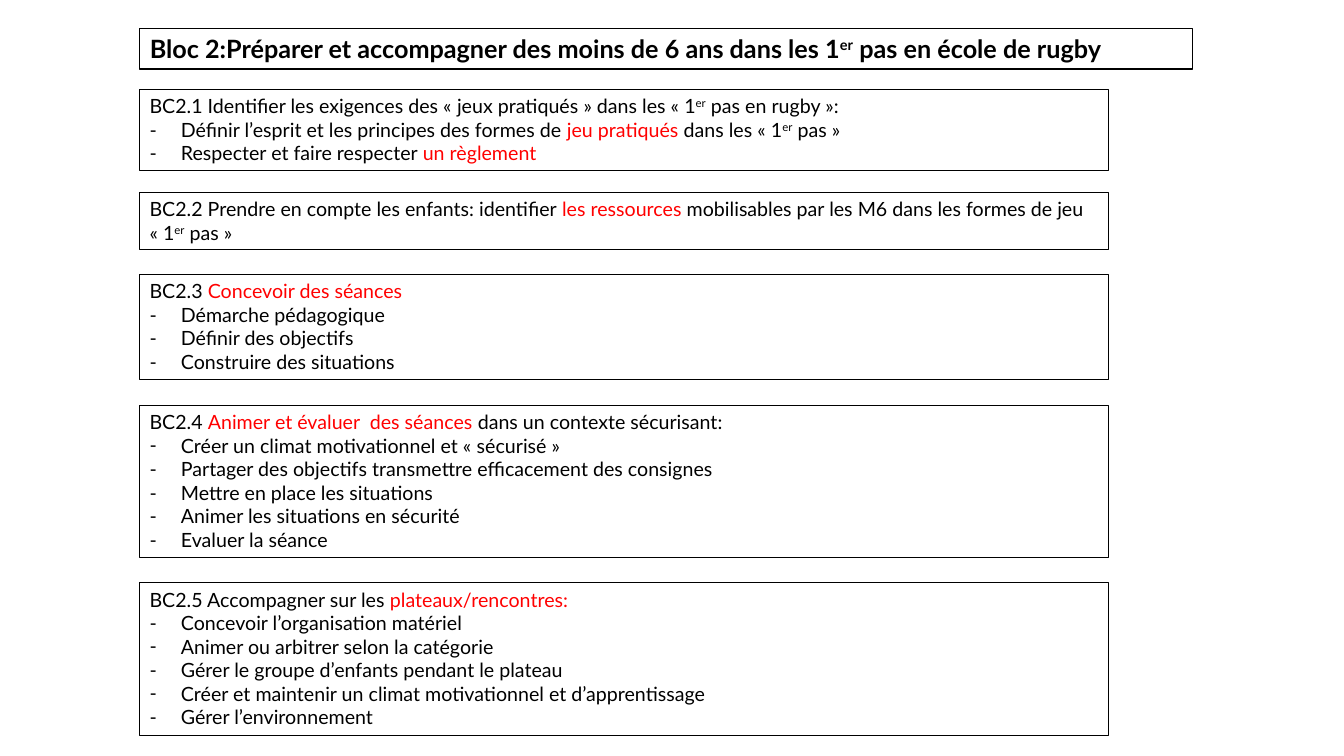
"""Build the slide listing the skills of training block 2 for rugby schools."""
from lxml.etree import SubElement
from pptx import Presentation
from pptx.dml.color import RGBColor
from pptx.enum.text import MSO_ANCHOR, MSO_AUTO_SIZE, PP_ALIGN
from pptx.oxml.ns import qn
from pptx.util import Cm, Pt

BLACK = RGBColor(0x00, 0x00, 0x00)
RED = RGBColor(0xFF, 0x00, 0x00)
FONT = "Lato"
LEFT = Cm(3.52)
INDENT = Cm(0.79)
NO_BREAK_SPACE = chr(160)

TITLE = "Bloc 2:Préparer et accompagner des moins de 6 ans dans les 1^er^ pas en école de rugby"
BLOCKS = [
    (2.25, 3, "BC2.1 Identifier les exigences des « jeux pratiqués » dans les « 1^er^ pas en rugby »:", [
        "Définir l’esprit et les principes des formes de |jeu pratiqués |dans les « 1^er^ pas »",
        "Respecter et faire respecter |un règlement",
    ]),
    (4.85, 2, "BC2.2 Prendre en compte les enfants: identifier |les ressources |mobilisables "
              "par les M6 dans les formes de jeu « 1^er^ pas »", []),
    (6.91, 4, "BC2.3 |Concevoir des séances", [
        "Démarche pédagogique",
        "Définir des objectifs",
        "Construire des situations",
    ]),
    (10.21, 6, "BC2.4 |Animer et évaluer  des séances |dans un contexte sécurisant:", [
        "Créer un climat motivationnel et « sécurisé »",
        "Partager des objectifs transmettre efficacement des consignes",
        "Mettre en place les situations",
        "Animer les situations en sécurité",
        "Evaluer la séance",
    ]),
    (14.68, 6, "BC2.5 Accompagner sur les |plateaux/rencontres:", [
        "Concevoir l’organisation matériel",
        "Animer ou arbitrer selon la catégorie",
        "Gérer le groupe d’enfants pendant le plateau",
        "Créer et maintenir un climat motivationnel et d’apprentissage",
        "Gérer l’environnement",
    ]),
]


def bind_quotes(text):
    """Keep French quotation marks on the line of the words they enclose."""
    return text.replace("« ", "«" + NO_BREAK_SPACE).replace(" »", NO_BREAK_SPACE + "»")


def add_runs(p, marked, size, bold=False):
    """Write text where |...| marks red and ^...^ marks superscript."""
    for i, part in enumerate(bind_quotes(marked).split("|")):
        for j, text in enumerate(part.split("^")):
            if not text:
                continue
            r = p.add_run()
            r.text = text
            r.font.name = FONT
            r.font.size = Pt(size)
            r.font.bold = bold
            r.font.color.rgb = RED if i % 2 else BLACK
            if j % 2:
                r.font._element.set("baseline", "30000")


def set_dash(p):
    """Give a paragraph a hanging dash bullet."""
    pPr = p._p.get_or_add_pPr()
    pPr.set("marL", str(INDENT))
    pPr.set("indent", str(-INDENT))
    SubElement(pPr, qn("a:buFont")).set("typeface", FONT)
    SubElement(pPr, qn("a:buChar")).set("char", "-")


def frame(sp):
    """Outline a text shape of fixed size and prepare its text frame."""
    sp.line.color.rgb = BLACK
    sp.line.width = Pt(0.75)
    tf = sp.text_frame
    tf.word_wrap = True
    tf.auto_size = MSO_AUTO_SIZE.NONE
    tf.vertical_anchor = MSO_ANCHOR.TOP
    return tf


def format_title(sp):
    """Place and fill the title placeholder."""
    sp.left, sp.top, sp.width, sp.height = LEFT, Cm(0.71), Cm(26.54), Cm(1.03)
    p = frame(sp).paragraphs[0]
    p.alignment = PP_ALIGN.LEFT
    add_runs(p, TITLE, 18, bold=True)


def add_block(s, top, lines, heading, items):
    """Add one outlined skill block with its dashed items."""
    sp = s.shapes.add_textbox(LEFT, Cm(top), Cm(24.41), Cm(0.25 + 0.6 * lines))
    tf = frame(sp)
    add_runs(tf.paragraphs[0], heading, 14)
    for item in items:
        p = tf.add_paragraph()
        set_dash(p)
        add_runs(p, item, 14)


def main():
    """Build and save the presentation."""
    prs = Presentation()
    prs.slide_width, prs.slide_height = Cm(33.87), Cm(19.05)
    s = prs.slides.add_slide(prs.slide_layouts[5])
    format_title(s.shapes.title)
    for block in BLOCKS:
        add_block(s, *block)
    prs.save("out.pptx")


if __name__ == "__main__":
    main()
